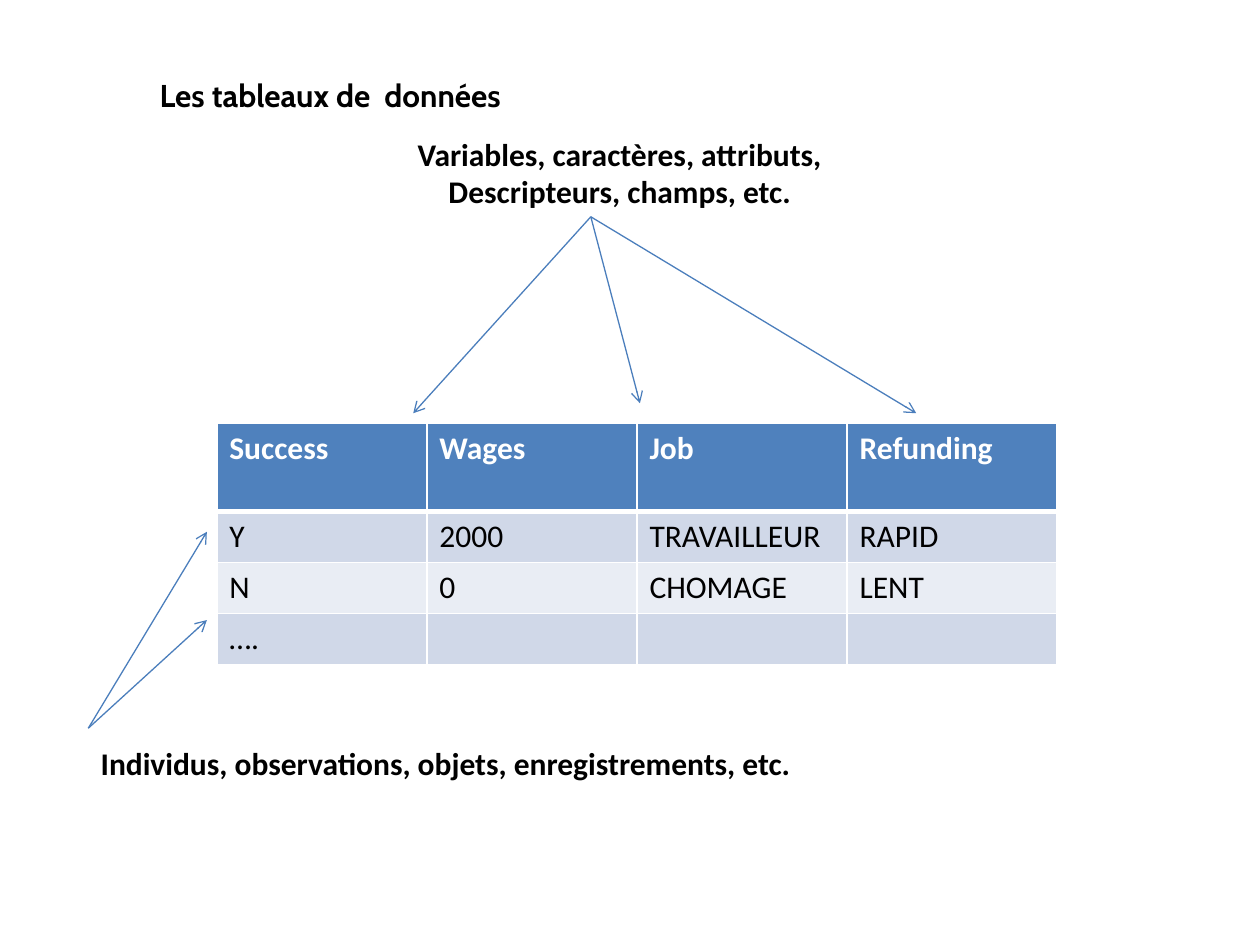
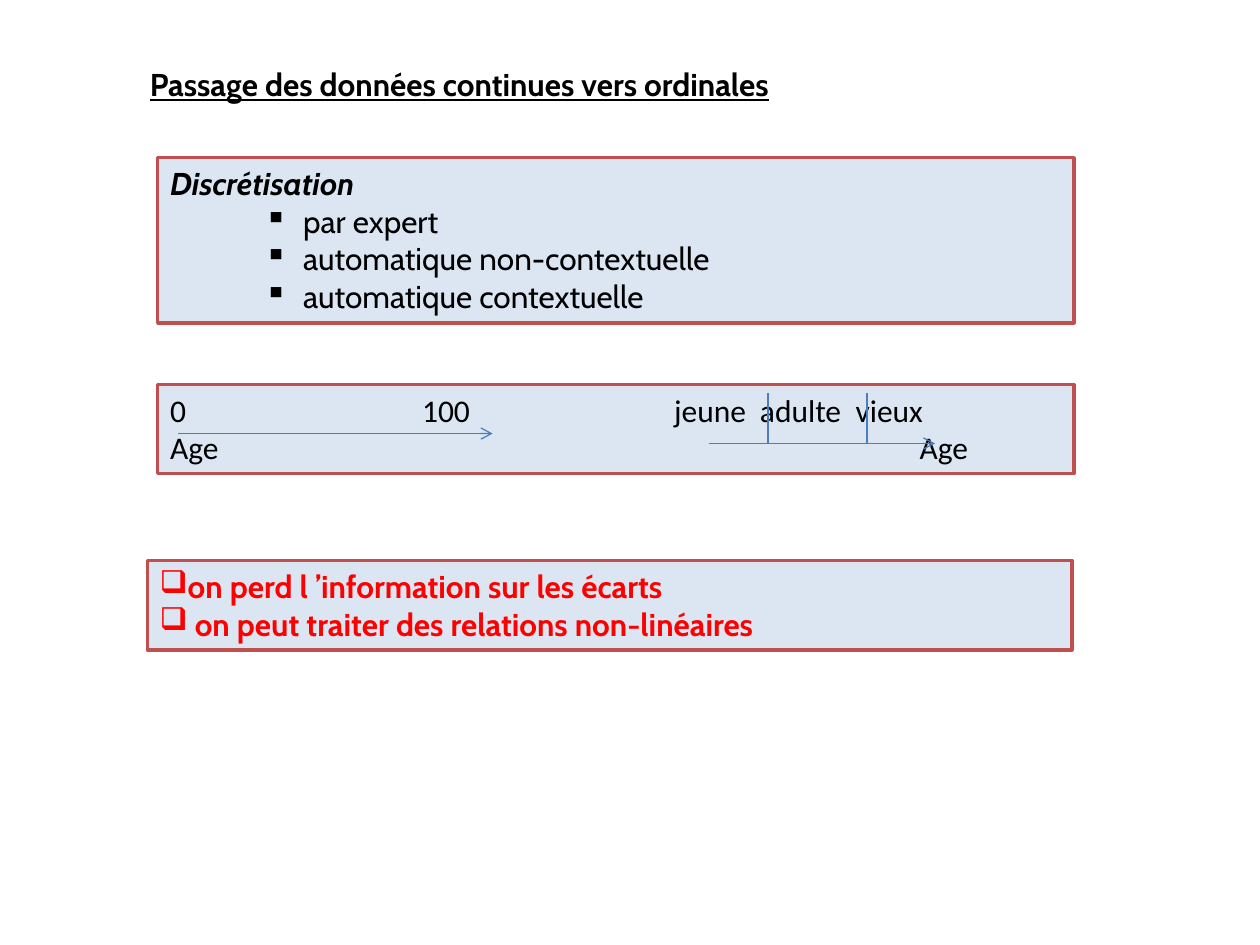
from dataclasses import dataclass

from lxml import etree
from pptx import Presentation
from pptx import util as u
from pptx.dml.color import RGBColor
from pptx.enum import shapes, text
from pptx.oxml.ns import qn


@dataclass(frozen=True)
class Theme:
    title_font: str = "Cabin"
    body_font: str = "Calibri"
    size: int = 18
    ink: str = "000000"
    white: str = "FFFFFF"
    alert: str = "FF0000"
    arrow: str = "4B7EBC"
    arrow_width: float = 0.75
    panel: str = "DCE6F2"
    panel_line: str = "C0504D"
    panel_line_width: float = 2
    header: str = "4F81BD"
    bands: tuple = ("D0D8E8", "E9EDF4")


@dataclass(frozen=True)
class Box:
    """A region of the slide, in centimetres."""
    left: float
    top: float
    width: float
    height: float

    def lengths(self):
        return [u.Cm(value) for value in (self.left, self.top, self.width, self.height)]

    def point(self, x, y):
        return u.Cm(self.left + x), u.Cm(self.top + y)


THEME = Theme()


def add_run(paragraph, words, font=THEME.body_font, color=THEME.ink,
            bold=False, italic=False, underline=False):
    run = paragraph.add_run()
    run.text = words
    run.font.name = font
    run.font.size = u.Pt(THEME.size)
    run.font.color.rgb = RGBColor.from_string(color)
    run.font.bold, run.font.italic, run.font.underline = bold, italic, underline


def add_line(frame, words, **style):
    """Write one paragraph, using the frame's empty first one if it is free."""
    first = frame.paragraphs[0]
    paragraph = frame.add_paragraph() if first.runs else first
    paragraph.alignment = text.PP_ALIGN.LEFT
    add_run(paragraph, words, **style)
    return paragraph


def set_bullet(paragraph, mark, margin, hanging):
    properties = paragraph._p.get_or_add_pPr()
    properties.set("marL", str(u.Cm(margin)))
    properties.set("indent", str(-u.Cm(hanging)))
    etree.SubElement(properties, qn("a:buChar")).set("char", mark)


def set_tabs(paragraph, positions):
    tab_list = etree.SubElement(paragraph._p.get_or_add_pPr(), qn("a:tabLst"))
    for position in positions:
        tab = etree.SubElement(tab_list, qn("a:tab"))
        tab.set("pos", str(u.Cm(position)))
        tab.set("algn", "l")


def add_text(slide, box):
    frame = slide.shapes.add_textbox(*box.lengths()).text_frame
    frame.word_wrap = True
    return frame


def add_title(slide, box, words, underline=False):
    add_line(add_text(slide, box), words, font=THEME.title_font,
             bold=True, underline=underline)


def add_panel(slide, box):
    """Draw a framed panel and return its text frame."""
    panel = slide.shapes.add_shape(shapes.MSO_SHAPE.RECTANGLE, *box.lengths())
    panel.shadow.inherit = False
    panel.fill.solid()
    panel.fill.fore_color.rgb = RGBColor.from_string(THEME.panel)
    panel.line.color.rgb = RGBColor.from_string(THEME.panel_line)
    panel.line.width = u.Pt(THEME.panel_line_width)
    frame = panel.text_frame
    frame.word_wrap = True
    frame.vertical_anchor = text.MSO_ANCHOR.TOP
    return frame


def add_connector(slide, box, start, end, arrow=True):
    """Join two points given relative to the box."""
    connector = slide.shapes.add_connector(
        shapes.MSO_CONNECTOR.STRAIGHT, *box.point(*start), *box.point(*end))
    connector.line.color.rgb = RGBColor.from_string(THEME.arrow)
    connector.line.width = u.Pt(THEME.arrow_width)
    if arrow:
        line = connector.line._get_or_add_ln()
        etree.SubElement(line, qn("a:tailEnd")).set("type", "arrow")
    etree.SubElement(connector._element.spPr, qn("a:effectLst"))


def set_borders(cell, bottom_width):
    properties = cell._tc.get_or_add_tcPr()
    widths = {"a:lnL": 1, "a:lnR": 1, "a:lnT": 1, "a:lnB": bottom_width}
    for index, (side, width) in enumerate(widths.items()):
        border = etree.Element(qn(side), w=str(u.Pt(width)))
        fill = etree.SubElement(border, qn("a:solidFill"))
        etree.SubElement(fill, qn("a:srgbClr")).set("val", THEME.white)
        properties.insert(index, border)


def add_data_table(slide, box, rows, header_height):
    table = slide.shapes.add_table(len(rows), len(rows[0]), *box.lengths()).table
    for column in table.columns:
        column.width = u.Cm(box.width / len(rows[0]))
    row_height = (box.height - header_height) / (len(rows) - 1)
    for row_index, values in enumerate(rows):
        is_header = row_index == 0
        table.rows[row_index].height = u.Cm(header_height if is_header else row_height)
        fill = THEME.header if is_header else THEME.bands[(row_index - 1) % 2]
        for column_index, value in enumerate(values):
            cell = table.cell(row_index, column_index)
            cell.fill.solid()
            cell.fill.fore_color.rgb = RGBColor.from_string(fill)
            set_borders(cell, 3 if is_header else 1)
            if value:
                add_line(cell.text_frame, value, bold=is_header,
                         color=THEME.white if is_header else THEME.ink)
            else:
                cell.text_frame.paragraphs[0].font.size = u.Pt(THEME.size)


def add_variables_label(slide, box):
    frame = add_text(slide, box)
    for words in ("Variables, caractères, attributs,", "Descripteurs, champs, etc."):
        add_line(frame, words, bold=True).alignment = text.PP_ALIGN.CENTER
    for tip in ((5.36, 5.74), (9.93, 5.54), (15.5, 5.74)):
        add_connector(slide, box, (8.94, 1.78), tip)


def add_individuals_label(slide, box):
    add_line(add_text(slide, box),
             "Individus, observations, objets, enregistrements, etc.", bold=True)
    for tip_top in (-2.38, -4.16):
        add_connector(slide, box, (0, -0.2), (2.39, tip_top))


def add_discretisation_panel(slide, box):
    frame = add_panel(slide, box)
    add_line(frame, "Discrétisation", font=THEME.title_font, bold=True, italic=True)
    for words in ("par expert", "automatique non-contextuelle", "automatique contextuelle"):
        set_bullet(add_line(frame, words, font=THEME.title_font), "▪", 2.68, 0.78)


def add_age_panel(slide, box):
    """Show age as a continuous axis, then as three ordered classes."""
    frame = add_panel(slide, box)
    set_tabs(add_line(frame, "0\t100\tjeune\tadulte\tvieux"), (5.08, 10.16, 11.89, 13.82))
    set_tabs(add_line(frame, "Age\tAge"), (15.11,))
    add_connector(slide, box, (0.4, 0.99), (6.75, 0.99))
    add_connector(slide, box, (11.12, 1.19), (15.67, 1.19))
    for threshold in (12.3, 14.3):
        add_connector(slide, box, (threshold, 0.17), (threshold, 1.19), arrow=False)


def add_consequences_panel(slide, box):
    frame = add_panel(slide, box)
    for words in ("on perd l ’information sur les écarts",
                  " on peut traiter des relations non-linéaires"):
        paragraph = add_line(frame, words, font=THEME.title_font,
                             color=THEME.alert, bold=True)
        set_bullet(paragraph, "❑", 0.56, 0.56)


def build_data_table_slide(slide):
    add_title(slide, Box(2.97, 1.4, 19.46, 1.02), "Les tableaux de  données")
    add_data_table(slide, Box(4.37, 8.53, 16.94, 4.87), [
        ("Success", "Wages", "Job", "Refunding"),
        ("Y", "2000", "TRAVAILLEUR", "RAPID"),
        ("N", "0", "CHOMAGE", "LENT"),
        ("….", "", "", ""),
    ], header_height=1.78)
    add_variables_label(slide, Box(2.97, 2.59, 19.05, 1.8))
    add_individuals_label(slide, Box(1.78, 14.88, 15.09, 1.02))


def build_discretisation_slide(slide):
    add_title(slide, Box(2.77, 1.19, 19.05, 1.8),
              "Passage des données continues vers ordinales", underline=True)
    add_discretisation_panel(slide, Box(3.18, 3.18, 18.47, 3.33))
    add_age_panel(slide, Box(3.18, 7.75, 18.47, 1.8))
    add_consequences_panel(slide, Box(2.97, 11.3, 18.64, 1.8))


def main():
    presentation = Presentation()
    presentation.slide_width, presentation.slide_height = u.Cm(25.4), u.Cm(19.05)
    blank_layout = presentation.slide_layouts[6]
    for build in (build_data_table_slide, build_discretisation_slide):
        build(presentation.slides.add_slide(blank_layout))
    presentation.save("out.pptx")


if __name__ == "__main__":
    main()
